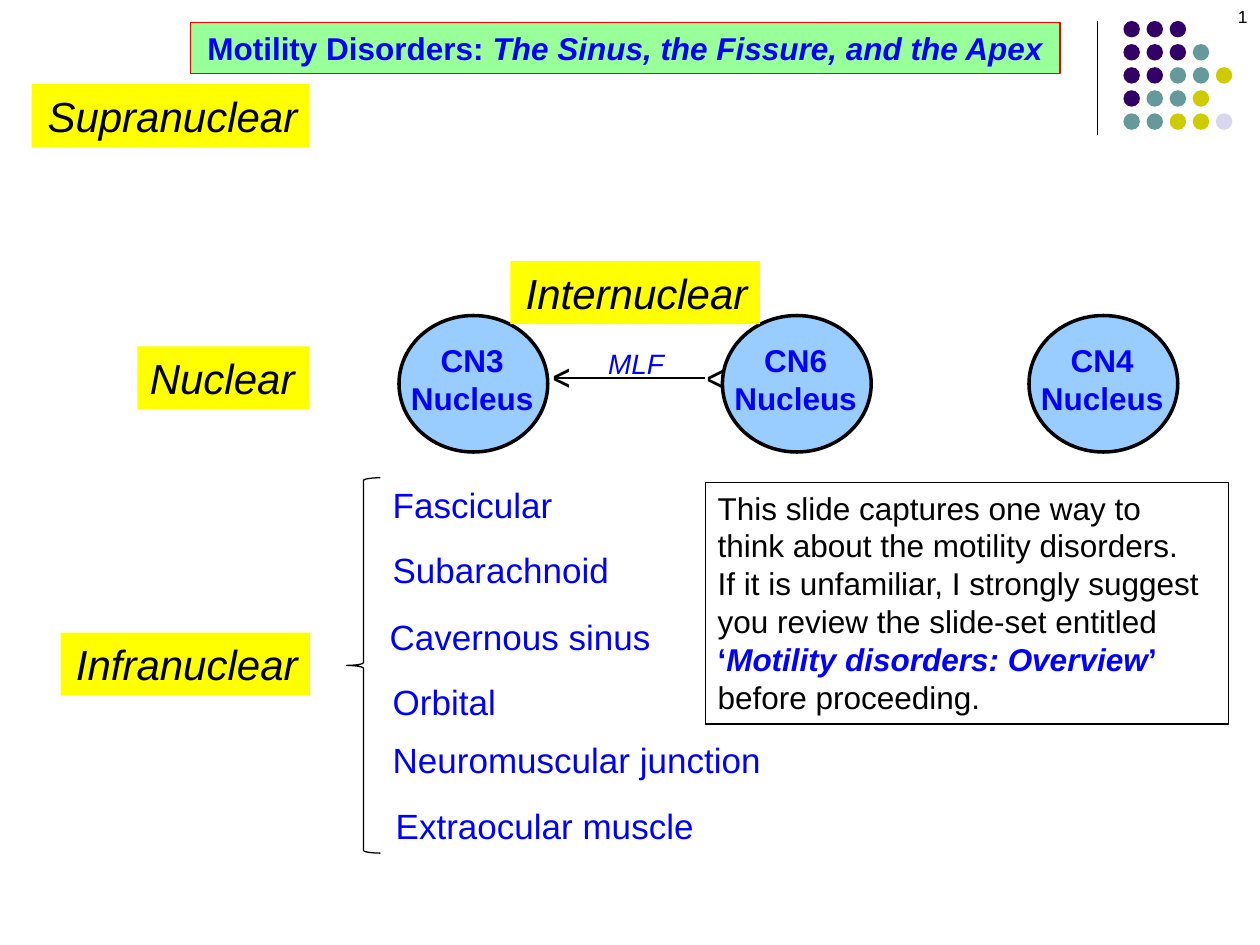
import pptx
import pptx.dml.color
import pptx.enum.shapes
import pptx.enum.text
import pptx.oxml.ns
import pptx.util
from lxml import etree

Pt = pptx.util.Pt
SHAPES = pptx.enum.shapes.MSO_SHAPE
ALIGN = pptx.enum.text.PP_ALIGN

COLORS = {
    "black": "000000", "blue": "0000FF", "red": "FF0000",
    "yellow": "FFFF00", "green": "99FF99", "sky": "99CCFF",
    "P": "330066", "T": "669999", "Y": "CCCC00", "L": "D8D8EC",
}
DOT_ROWS = ["PPP", "PPPT", "PPTTY", "PTTY", "TTYYL"]


def color_of(name):
    return pptx.dml.color.RGBColor.from_string(COLORS[name])


def add_form(page, kind, left, top, width, height, fill=None, line=None, weight=0.75):
    """Add a preset shape; no fill or no line when the colour is None."""
    shape = page.shapes.add_shape(kind, Pt(left), Pt(top), Pt(width), Pt(height))
    shape.shadow.inherit = False
    if fill:
        shape.fill.solid()
        shape.fill.fore_color.rgb = color_of(fill)
    else:
        shape.fill.background()
    if line:
        shape.line.color.rgb = color_of(line)
        shape.line.width = Pt(weight)
    else:
        shape.line.fill.background()
    return shape


def add_box(page, left, top, width, height):
    return page.shapes.add_textbox(Pt(left), Pt(top), Pt(width), Pt(height))


def write(box, paragraphs, size=18, color="black", bold=False, italic=False,
          align=ALIGN.LEFT, wrap=False, grow=True):
    """Fill a box; each paragraph is a list of (text, overrides) spans."""
    frame = box.text_frame
    frame.word_wrap = wrap
    frame.vertical_anchor = pptx.enum.text.MSO_ANCHOR.TOP
    if grow:
        frame.auto_size = pptx.enum.text.MSO_AUTO_SIZE.SHAPE_TO_FIT_TEXT
    for index, spans in enumerate(paragraphs):
        para = frame.add_paragraph() if index else frame.paragraphs[0]
        para.alignment = align
        for text, changes in spans:
            look = {"color": color, "bold": bold, "italic": italic, **changes}
            span = para.add_run()
            span.text = text
            span.font.name = "Arial"
            span.font.size = Pt(size)
            span.font.bold = look["bold"]
            span.font.italic = look["italic"]
            span.font.color.rgb = color_of(look["color"])


def add_line(page, x1, y1, x2, y2):
    line = page.shapes.add_connector(
        pptx.enum.shapes.MSO_CONNECTOR.STRAIGHT, Pt(x1), Pt(y1), Pt(x2), Pt(y2))
    line.line.color.rgb = color_of("black")
    line.line.width = Pt(0.75)
    etree.SubElement(line._element.spPr, pptx.oxml.ns.qn("a:effectLst"))


def add_dots(page):
    for row, colors in enumerate(DOT_ROWS):
        for column, color in enumerate(colors):
            add_form(page, SHAPES.OVAL, 642 + 13.2 * column, 12 + 13.2 * row,
                     9.4, 9.4, fill=color)


def add_nucleus(page, name, left):
    add_form(page, SHAPES.OVAL, left, 180.3, 85, 78, fill="sky", line="black", weight=2)
    box = add_box(page, left - 0.7, 191.5, 85, 51)
    write(box, [[(name, {})], [("Nucleus", {})]],
          color="blue", bold=True, align=ALIGN.CENTER)


def add_level(page, text, left, top, width, align=ALIGN.RIGHT):
    box = add_form(page, SHAPES.RECTANGLE, left, top, width, 36, fill="yellow")
    write(box, [[(text, {})]], size=24, italic=True, align=align)


def add_caret(page, left, top):
    box = add_box(page, left, top, 26, 40)
    box.rotation = 270
    write(box, [[("^", {})]], size=24)


def main():
    deck = pptx.Presentation()
    deck.slide_width, deck.slide_height = Pt(720), Pt(540)
    page = deck.slides.add_slide(deck.slide_layouts[6])

    # Corner decoration and page number
    add_line(page, 627, 12, 627, 77)
    add_dots(page)
    write(add_box(page, 552, 0, 168, 36), [[("1", {})]], size=10,
          align=ALIGN.RIGHT, wrap=True, grow=False)

    # Nuclei
    for name, left in [("CN3", 228), ("CN4", 588), ("CN6", 412.8)]:
        add_nucleus(page, name, left)

    # Levels of the pathway
    add_level(page, "Nuclear", 78.5, 198, 98, align=ALIGN.LEFT)
    add_level(page, "Supranuclear", 18, 48, 159)
    add_level(page, "Infranuclear", 34.7, 361.5, 142.5)
    add_level(page, "Internuclear", 291.7, 149.3, 142.5)

    # MLF pathway
    add_line(page, 317.5, 216, 403, 216)
    add_caret(page, 400.5, 196.5)
    add_caret(page, 312.5, 196)
    write(add_box(page, 340, 194.6, 46.8, 26.6), [[("MLF", {})]],
          size=16, color="blue", italic=True, align=ALIGN.CENTER)

    # Infranuclear sites
    add_form(page, SHAPES.LEFT_BRACE, 198, 273, 19.4, 214.5, line="black")
    for text, left, top, width in [
            ("Fascicular", 217.3, 273, 106.5),
            ("Subarachnoid", 217.3, 310, 139),
            ("Cavernous sinus", 215.5, 348, 165),
            ("Orbital", 217.3, 385.3, 74),
            ("Neuromuscular junction", 217.3, 418.5, 227),
            ("Extraocular muscle", 219, 456, 186.5)]:
        write(add_box(page, left, top, width, 31.5), [[(text, {})]],
              size=20, color="blue")

    # Note
    note = add_form(page, SHAPES.RECTANGLE, 403, 275.6, 299, 138.2, line="black")
    quote = {"color": "blue", "bold": True}
    write(note, [
        [("This slide captures one way to think about the motility disorders.", {})],
        [("If it is unfamiliar, I strongly suggest you review the slide-set entitled ", {}),
         ("‘", quote),
         ("Motility disorders: Overview", {**quote, "italic": True}),
         ("’", quote)],
        [("before proceeding.", {})],
    ], wrap=True)

    # Title
    title = add_form(page, SHAPES.RECTANGLE, 108.7, 13, 497, 29, fill="green", line="red")
    write(title, [[("Motility Disorders: ", {}),
                   ("The Sinus, the Fissure, and the Apex", {"italic": True})]],
          color="blue", bold=True, align=ALIGN.CENTER)

    deck.save("out.pptx")


if __name__ == "__main__":
    main()
